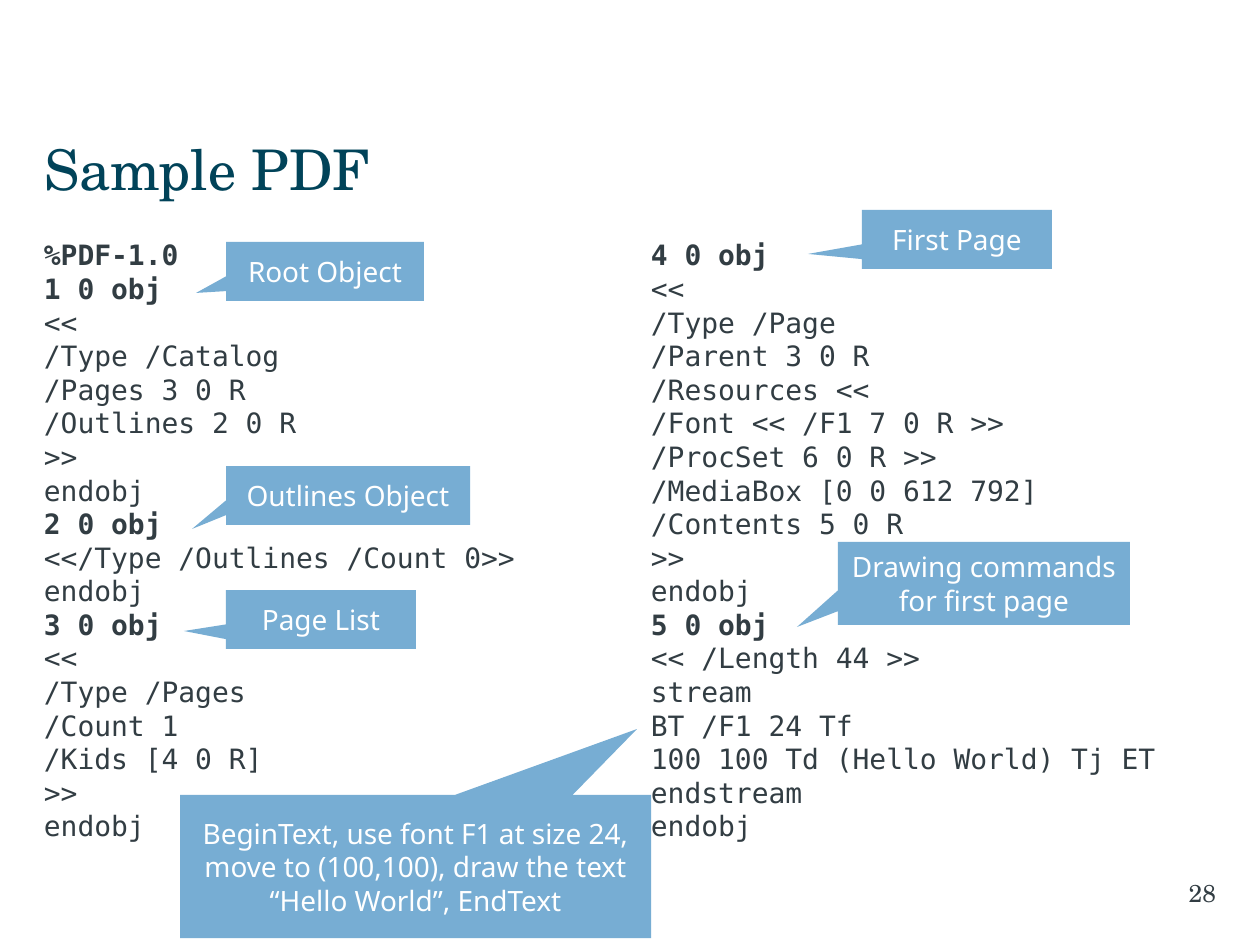
from pptx import Presentation
from pptx.dml.color import RGBColor
from pptx.enum.shapes import MSO_SHAPE
from pptx.enum.text import MSO_ANCHOR, PP_ALIGN
from pptx.util import Emu, Pt

CALLOUT = MSO_SHAPE.RECTANGULAR_CALLOUT
MIDDLE, TOP = MSO_ANCHOR.MIDDLE, MSO_ANCHOR.TOP
LEFT, CENTER, RIGHT = PP_ALIGN.LEFT, PP_ALIGN.CENTER, PP_ALIGN.RIGHT

PX_PER_INCH = 126
TITLE_ONLY = 5
LINE_PITCH = Pt(19.2)
COLORS = {"title": "014359", "body": "323D43", "callout": "77ADD3", "label": "FFFFFF"}
SERIF, SANS, MONO = "TeX Gyre Schola", "Noto Sans", "DejaVu Sans Mono"

CODE_LEFT = """%PDF-1.0
1 0 obj
<<
/Type /Catalog
/Pages 3 0 R
/Outlines 2 0 R
>>
endobj
2 0 obj
<</Type /Outlines /Count 0>>
endobj
3 0 obj
<<
/Type /Pages
/Count 1
/Kids [4 0 R]
>>
endobj"""

CODE_RIGHT = """4 0 obj
<<
/Type /Page
/Parent 3 0 R
/Resources <<
/Font << /F1 7 0 R >>
/ProcSet 6 0 R >>
/MediaBox [0 0 612 792]
/Contents 5 0 R
>>
endobj
5 0 obj
<< /Length 44 >>
stream
BT /F1 24 Tf
100 100 Td (Hello World) Tj ET
endstream
endobj"""

# label, box (left, top, width, height), tip (x, y)
CALLOUTS = [
    ("Root Object", (226, 242, 198, 59), (196, 293)),
    ("Outlines Object", (226, 466, 244, 59), (192, 529)),
    ("Page List", (226, 590, 190, 59), (184, 631)),
    ("First Page", (862, 210, 190, 59), (808, 254)),
    ("Drawing commands for first page", (838, 542, 292, 83), (797, 627)),
    ("BeginText, use font F1 at size 24, move to (100,100), "
     "draw the text “Hello World”, EndText", (180, 795, 471, 143), (637, 729)),
]


def px(length):
    return Emu(round(length * 914400 / PX_PER_INCH))


def set_all(target, values):
    for name, value in values.items():
        setattr(target, name, value)


def format_frame(frame, insets, anchor):
    """Set wrapping, anchor and the left, top, right, bottom insets in px."""
    sides = ("margin_left", "margin_top", "margin_right", "margin_bottom")
    set_all(frame, dict(zip(sides, map(px, insets))))
    set_all(frame, {"word_wrap": True, "vertical_anchor": anchor})


def add_run(paragraph, text, font, size, color, bold=False):
    run = paragraph.add_run()
    run.text = text
    set_all(run.font, {"name": font, "size": Pt(size), "bold": bold})
    run.font.color.rgb = RGBColor.from_string(COLORS[color])


def place_title(slide, box, text):
    title = slide.shapes.title
    set_all(title, dict(zip(("left", "top", "width", "height"), map(px, box))))
    format_frame(title.text_frame, (0, 6, 13, 6), MIDDLE)
    heading = title.text_frame.paragraphs[0]
    heading.alignment = LEFT
    add_run(heading, text, SERIF, 32, "title")


def add_code(slide, box, code):
    """Add a listing in which the header and object numbers are bold."""
    frame = slide.shapes.add_textbox(*map(px, box)).text_frame
    format_frame(frame, (0, 6, 13, 6), TOP)
    listing = frame.paragraphs[0]
    set_all(listing, {"line_spacing": LINE_PITCH, "space_after": Pt(18)})
    for number, line in enumerate(code.splitlines()):
        if number:
            listing.add_line_break()
        is_header = line.startswith("%") or line.endswith(" obj")
        add_run(listing, line, MONO, 16, "body", is_header)


def add_page_number(slide, box, number):
    frame = slide.shapes.add_textbox(*map(px, box)).text_frame
    format_frame(frame, (13, 6, 0, 6), MIDDLE)
    frame.paragraphs[0].alignment = RIGHT
    add_run(frame.paragraphs[0], number, SERIF, 14, "body")


def add_callout(slide, label, box, tip):
    left, top, width, height = box
    callout = slide.shapes.add_shape(CALLOUT, *map(px, box))
    callout.adjustments[0] = (tip[0] - left - width / 2) / width
    callout.adjustments[1] = (tip[1] - top - height / 2) / height
    callout.shadow.inherit = False
    callout.fill.solid()
    callout.fill.fore_color.rgb = RGBColor.from_string(COLORS["callout"])
    callout.line.fill.background()
    format_frame(callout.text_frame, (10, 10, 10, 10), MIDDLE)
    caption = callout.text_frame.paragraphs[0]
    set_all(caption, {"alignment": CENTER, "line_spacing": LINE_PITCH})
    add_run(caption, label, SANS, 16, "label")


def main():
    deck = Presentation()
    set_all(deck, {"slide_width": px(1260), "slide_height": px(945)})
    slide = deck.slides.add_slide(deck.slide_layouts[TITLE_ONLY])
    place_title(slide, (44, 123, 1171, 90), "Sample PDF")
    for left, code in ((44, CODE_LEFT), (651, CODE_RIGHT)):
        add_code(slide, (left, 232, 564, 619), code)
    add_page_number(slide, (974, 871, 242, 43), "28")
    for label, box, tip in CALLOUTS:
        add_callout(slide, label, box, tip)
    deck.save("out.pptx")


if __name__ == "__main__":
    main()
